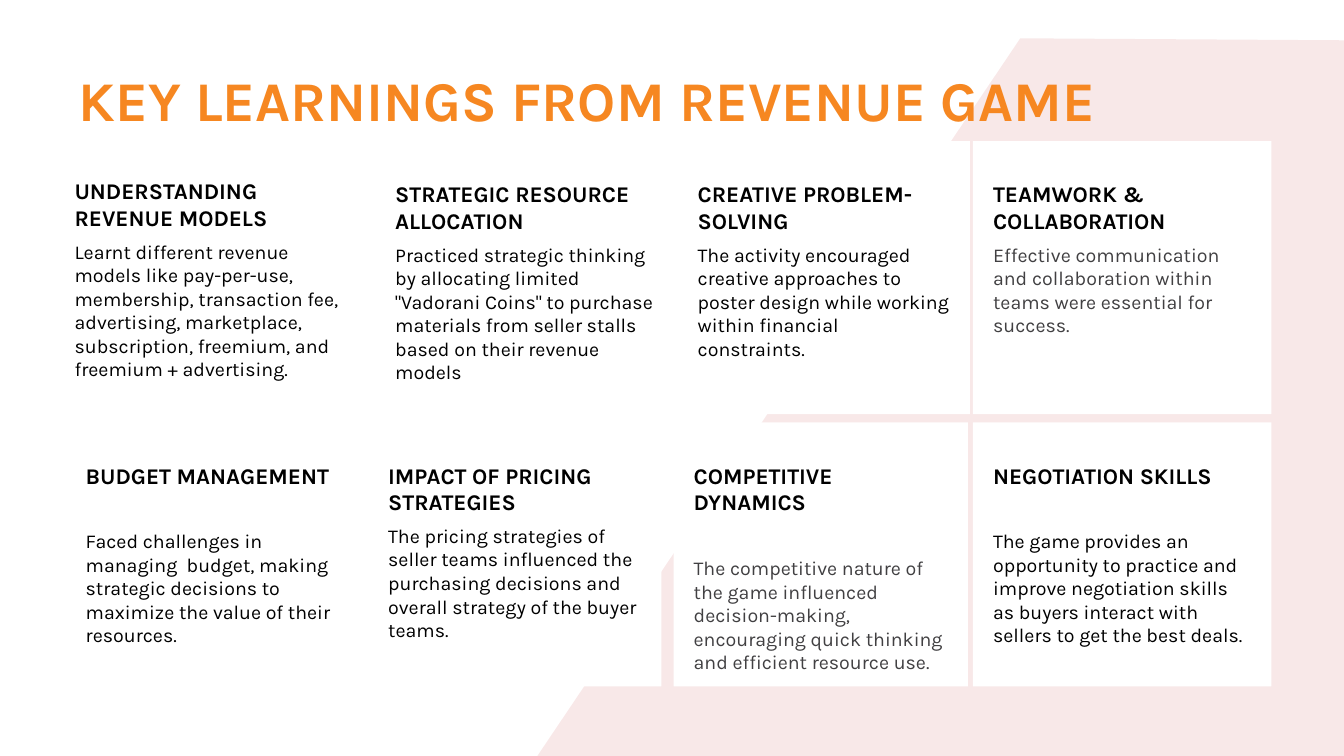
from lxml import etree
from pptx import Presentation
from pptx.dml.color import RGBColor
from pptx.enum.shapes import MSO_SHAPE
from pptx.enum.text import MSO_ANCHOR, MSO_AUTO_SIZE, PP_ALIGN
from pptx.oxml.ns import qn
from pptx.util import Inches, Pt

RECTANGLE = MSO_SHAPE.RECTANGLE
TOP = MSO_ANCHOR.TOP
LEFT = PP_ALIGN.LEFT
NO_AUTOFIT = MSO_AUTO_SIZE.NONE

SLIDE_W, SLIDE_H = 13.33, 7.5
FONT = "Karla"
COLORS = {
    "accent": "F68721",
    "band": "BF2026",
    "card": "FFFFFF",
    "ink": "000000",
    "muted": "414042",
}
TITLE_ONLY = 5
ROW_TOPS = (1.4, 4.19)
CARD_H = (2.71, 2.62)
CLOSE, WIDE = 6, 29  # points between heading and body

# Per row: left, width, heading, body, body colour, gap
LEARNINGS = (
    (
        (0.54, 3.13, "UNDERSTANDING REVENUE MODELS",
         "Learnt different revenue models like pay-per-use, membership, "
         "transaction fee, advertising, marketplace, subscription, freemium, "
         "and freemium + advertising.", "ink", CLOSE),
        (3.72, 2.96, "STRATEGIC RESOURCE ALLOCATION",
         "Practiced strategic thinking by allocating limited "
         "\"Vadorani Coins\" to purchase materials from seller stalls based "
         "on their revenue models", "ink", CLOSE),
        (6.72, 2.9, "CREATIVE PROBLEM-SOLVING",
         "The activity encouraged creative approaches to poster design while "
         "working within financial constraints.", "ink", CLOSE),
        (9.65, 2.96, "TEAMWORK & COLLABORATION",
         "Effective communication and collaboration within teams were "
         "essential for success.", "muted", CLOSE),
    ),
    (
        (0.65, 2.91, "BUDGET MANAGEMENT",
         "Faced challenges in managing  budget, making strategic decisions to "
         "maximize the value of their resources.", "ink", WIDE),
        (3.65, 2.91, "IMPACT OF PRICING STRATEGIES",
         "The pricing strategies of seller teams influenced the purchasing "
         "decisions and overall strategy of the buyer teams.", "ink", CLOSE),
        (6.68, 2.92, "COMPETITIVE DYNAMICS",
         "The competitive nature of the game influenced decision-making, "
         "encouraging quick thinking and efficient resource use.",
         "muted", WIDE),
        (9.65, 2.96, "NEGOTIATION SKILLS",
         "The game provides an opportunity to practice and improve "
         "negotiation skills as buyers interact with sellers to get the best "
         "deals.", "ink", WIDE),
    ),
)


def rgb(name):
    return RGBColor.from_string(COLORS[name])


def paint(shape, color):
    shape.shadow.inherit = False
    shape.fill.solid()
    shape.fill.fore_color.rgb = rgb(color)
    shape.line.fill.background()


def set_frame(frame, left=0, top=0, right=0, bottom=0):
    frame.word_wrap = True
    frame.auto_size = NO_AUTOFIT
    frame.vertical_anchor = TOP
    frame.margin_left, frame.margin_top = Inches(left), Inches(top)
    frame.margin_right, frame.margin_bottom = Inches(right), Inches(bottom)


def write(paragraph, text, size, color, bold=False):
    paragraph.alignment = LEFT
    run = paragraph.add_run()
    run.text = text
    run.font.name = FONT
    run.font.size = Pt(size)
    run.font.bold = bold
    run.font.color.rgb = rgb(color)


def add_band(slide):
    """Slanted translucent panel that runs off the right and bottom edges."""
    builder = slide.shapes.build_freeform(
        Inches(10.12), Inches(0.38))
    corners = ((SLIDE_W, 0.4), (SLIDE_W, SLIDE_H), (5.33, SLIDE_H))
    builder.add_line_segments(
        [(Inches(x), Inches(y)) for x, y in corners], close=True)
    band = builder.convert_to_shape()
    paint(band, "band")
    tint = band.element.spPr.find(qn("a:solidFill")).find(qn("a:srgbClr"))
    etree.SubElement(tint, qn("a:alpha")).set("val", "10000")


def add_card(slide, left, top, width, height, heading, body, color, gap):
    card = slide.shapes.add_shape(
        RECTANGLE, Inches(left), Inches(top), Inches(width), Inches(height))
    paint(card, "card")
    frame = card.text_frame
    set_frame(frame, 0.2, 0.39, 0.2, 0.05)
    write(frame.paragraphs[0], heading, 16, "ink", bold=True)
    detail = frame.add_paragraph()
    detail.space_before = Pt(gap)
    write(detail, body, 14, color)


def add_title(slide, text):
    """Fill the title placeholder and bring it in front of the panel."""
    title = slide.shapes.title
    title.left, title.top = Inches(0.78), Inches(0.65)
    title.width, title.height = Inches(11.79), Inches(0.67)
    set_frame(title.text_frame)
    write(title.text_frame.paragraphs[0], text, 40, "accent", bold=True)
    slide.shapes.element.append(title.element)


def main():
    deck = Presentation()
    deck.slide_width, deck.slide_height = Inches(SLIDE_W), Inches(SLIDE_H)
    slide = deck.slides.add_slide(deck.slide_layouts[TITLE_ONLY])
    add_band(slide)
    for top, height, row in zip(ROW_TOPS, CARD_H, LEARNINGS):
        for left, width, heading, body, color, gap in row:
            # The first card sits slightly above its row
            card_top = top - 0.03 if left == 0.54 else top
            add_card(slide, left, card_top, width, height,
                     heading, body, color, gap)
    add_title(slide, "KEY LEARNINGS FROM REVENUE GAME")
    deck.save("out.pptx")


if __name__ == "__main__":
    main()
